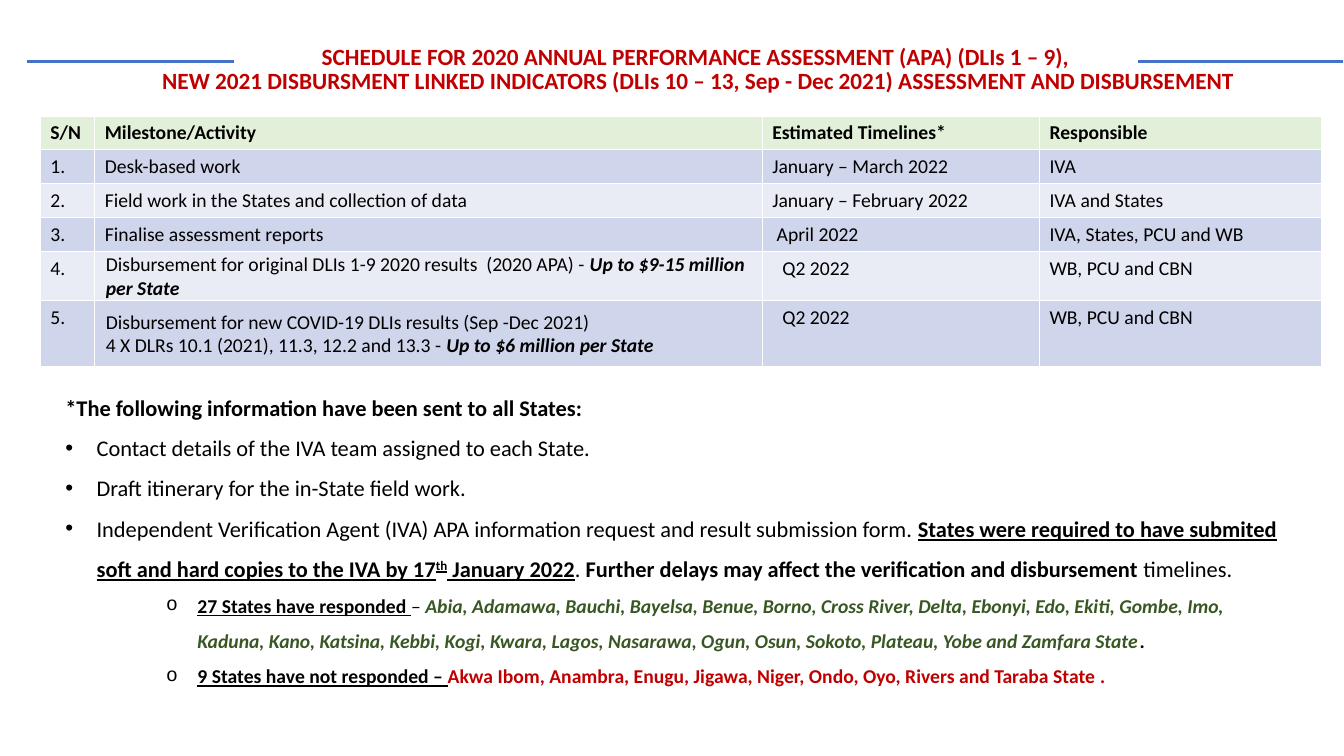
from dataclasses import dataclass

from pptx import Presentation
from pptx.dml.color import RGBColor
from pptx.enum.shapes import MSO_CONNECTOR as Connector
from pptx.enum.text import MSO_ANCHOR as Anchor, MSO_AUTO_SIZE as AutoSize, PP_ALIGN as Align
from pptx.oxml.ns import qn
from pptx.slide import Slide
from pptx.table import _Cell as Cell
from pptx.util import Inches, Pt

COLORS = {
    "black": "000000", "red": "C00000", "green": "385723", "blue": "4472C4",
    "header": "E2F0D9", "odd": "CFD5EA", "even": "E9EBF5",
}
FONT = "Calibri"


@dataclass
class Text:
    """A run of text; a line feed in it becomes a line break."""
    words: str
    bold: bool = False
    italic: bool = False
    underline: bool = False
    color: str = "black"
    raised: bool = False


@dataclass
class Note:
    """A paragraph below the table."""
    texts: list[Text]
    bullet: str = ""
    indent: float = 0
    size: float = 16
    level: int = 0


TITLE = [
    "SCHEDULE FOR 2020 ANNUAL PERFORMANCE ASSESSMENT (APA) (DLIs 1 – 9), ",
    "NEW 2021 DISBURSMENT LINKED INDICATORS (DLIs 10 – 13, Sep - Dec 2021) ASSESSMENT AND DISBURSEMENT",
]
HEADINGS = ["S/N", "Milestone/Activity", "Estimated Timelines*", "Responsible"]
ACTIVITIES = [
    ([Text("Desk-based work")], "January – March 2022", "IVA"),
    ([Text("Field work in the States and collection of data")], "January – February 2022", "IVA and States"),
    ([Text("Finalise assessment reports")], " April 2022", "IVA, States, PCU and WB"),
    ([Text("Disbursement for original DLIs 1-9 2020 results  (2020 APA) - "),
      Text("Up to $9-15 million per State", bold=True, italic=True)], "Q2 2022", "WB, PCU and CBN"),
    ([Text("Disbursement for new COVID-19 DLIs results (Sep -Dec 2021)\n"
           "4 X DLRs 10.1 (2021), 11.3, 12.2 and 13.3 - "),
      Text("Up to $6 million per State", bold=True, italic=True)], "Q2 2022", "WB, PCU and CBN"),
]
COLUMN_WIDTHS = [0.54, 6.62, 2.75, 2.8]
ROW_HEIGHTS = [0.32, 0.32, 0.32, 0.32, 0.45, 0.66]
FIRST_DISBURSEMENT_ROW = 4

NOTES = [
    Note([Text("*The following information have been sent to all States:", bold=True)]),
    Note([Text("Contact details of the IVA team assigned to each State.")], "•", 0.31),
    Note([Text("Draft itinerary for the in-State field work.")], "•", 0.31),
    Note([
        Text("Independent Verification Agent (IVA) APA information request and result submission form. "),
        Text("States were required to have submited soft and hard copies to the IVA by 17",
             bold=True, underline=True),
        Text("th", bold=True, underline=True, raised=True),
        Text(" January 2022", bold=True, underline=True),
        Text(". "),
        Text("Further delays may affect the verification and disbursement ", bold=True),
        Text("timelines."),
    ], "•", 0.31),
    Note([
        Text("27 States have responded ", bold=True, underline=True),
        Text("– "),
        Text("Abia, Adamawa, Bauchi, Bayelsa, Benue, Borno, Cross River, Delta, Ebonyi, Edo, Ekiti, "
             "Gombe, Imo, Kaduna, Kano, Katsina, Kebbi, Kogi, Kwara, Lagos, Nasarawa, Ogun, Osun, "
             "Sokoto, Plateau, Yobe and Zamfara State", bold=True, italic=True, color="green"),
        Text(".", bold=True),
    ], "o", 1.31, 14, 1),
    Note([
        Text("9 States have not responded – ", bold=True, underline=True),
        Text("Akwa Ibom, Anambra, Enugu, Jigawa, Niger, Ondo, Oyo, Rivers and Taraba State ",
             bold=True, color="red"),
        Text(".", bold=True, italic=True, color="red"),
    ], "o", 1.31, 14, 1),
]


def rgb(name: str) -> RGBColor:
    """Look up a named colour."""
    return RGBColor.from_string(COLORS[name])


def add_texts(paragraph, texts: list[Text], size: float) -> None:
    """Add formatted runs to a paragraph."""
    for text in texts:
        for number, line in enumerate(text.words.split("\n")):
            if number:
                paragraph.add_line_break()
            run = paragraph.add_run()
            run.text = line
            font = run.font
            font.name, font.size = FONT, Pt(size)
            font.bold, font.italic, font.underline = text.bold, text.italic, text.underline
            font.color.rgb = rgb(text.color)
            if text.raised:
                run._r.get_or_add_rPr().set("baseline", "30000")


def indent(paragraph, left: float, first: float = 0) -> None:
    """Set the left margin and first-line indent."""
    properties = paragraph._p.get_or_add_pPr()
    properties.set("marL", str(Inches(left)))
    properties.set("indent", str(Inches(first)))


def add_title(slide: Slide) -> None:
    """Fill the title placeholder and draw the rules beside it."""
    title = slide.shapes.title
    title.left, title.top, title.width, title.height = map(Inches, (1.21, 0.4, 11.42, 0.6))
    frame = title.text_frame
    frame.word_wrap, frame.auto_size = True, AutoSize.NONE
    frame.vertical_anchor = Anchor.MIDDLE
    for number, line in enumerate(TITLE):
        paragraph = frame.add_paragraph() if number else frame.paragraphs[0]
        paragraph.alignment, paragraph.line_spacing = Align.CENTER, 0.86
        paragraph.space_before = Pt(0)
        add_texts(paragraph, [Text(line, bold=True, color="red")], 16.6)
    for start, end in ((0.27, 2.32), (11.29, 13.32)):
        rule = slide.shapes.add_connector(
            Connector.STRAIGHT, Inches(start), Inches(0.61), Inches(end), Inches(0.61))
        rule.line.color.rgb, rule.line.width = rgb("blue"), Pt(1.5)
        rule._element.spPr.append(rule._element.makeelement(qn("a:effectLst"), {}))


def fill_cell(cell: Cell, texts: list[Text], color: str) -> None:
    """Write and colour one table cell."""
    cell.fill.solid()
    cell.fill.fore_color.rgb = rgb(color)
    add_texts(cell.text_frame.paragraphs[0], texts, 14)


def add_schedule(slide: Slide) -> None:
    """Add the table of activities."""
    table = slide.shapes.add_table(
        len(ROW_HEIGHTS), len(COLUMN_WIDTHS), Inches(0.4), Inches(1.15),
        Inches(sum(COLUMN_WIDTHS)), Inches(sum(ROW_HEIGHTS))).table
    for column, width in zip(table.columns, COLUMN_WIDTHS):
        column.width = Inches(width)
    for row, height in zip(table.rows, ROW_HEIGHTS):
        row.height = Inches(height)
    for column, heading in enumerate(HEADINGS):
        fill_cell(table.cell(0, column), [Text(heading, bold=True)], "header")
    for row, (activity, timeline, responsible) in enumerate(ACTIVITIES, 1):
        contents = [[Text(f"{row}.")], activity, [Text(timeline)], [Text(responsible)]]
        for column, texts in enumerate(contents):
            fill_cell(table.cell(row, column), texts, "odd" if row % 2 else "even")
        if row >= FIRST_DISBURSEMENT_ROW:
            for column in (1, 2):
                indent(table.cell(row, column).text_frame.paragraphs[0], 0.1)
            cell = table.cell(row, 1)
            cell.vertical_anchor = Anchor.MIDDLE
            cell.margin_left = cell.margin_top = cell.margin_right = Inches(0.01)
            cell.margin_bottom = 0


def add_notes_below(slide: Slide) -> None:
    """Add the bulleted information under the table."""
    box = slide.shapes.add_textbox(Inches(0.55), Inches(3.86), Inches(12.41), Inches(3.41))
    frame = box.text_frame
    frame.word_wrap, frame.auto_size = True, AutoSize.SHAPE_TO_FIT_TEXT
    for number, note in enumerate(NOTES):
        paragraph = frame.add_paragraph() if number else frame.paragraphs[0]
        if note.bullet:
            paragraph.level, paragraph.line_spacing = note.level, 1.5
            indent(paragraph, note.indent, -0.31)
            properties = paragraph._p.get_or_add_pPr()
            typeface = "Arial" if note.bullet == "•" else "Courier New"
            for tag, name, value in (("a:buFont", "typeface", typeface), ("a:buChar", "char", note.bullet)):
                properties.append(properties.makeelement(qn(tag), {name: value}))
        add_texts(paragraph, note.texts, note.size)


def main() -> None:
    """Build and save the slide."""
    presentation = Presentation()
    presentation.slide_width, presentation.slide_height = Inches(13.33), Inches(7.5)
    slide = presentation.slides.add_slide(presentation.slide_layouts[5])
    add_schedule(slide)
    add_notes_below(slide)
    add_title(slide)
    presentation.save("out.pptx")


if __name__ == "__main__":
    main()
